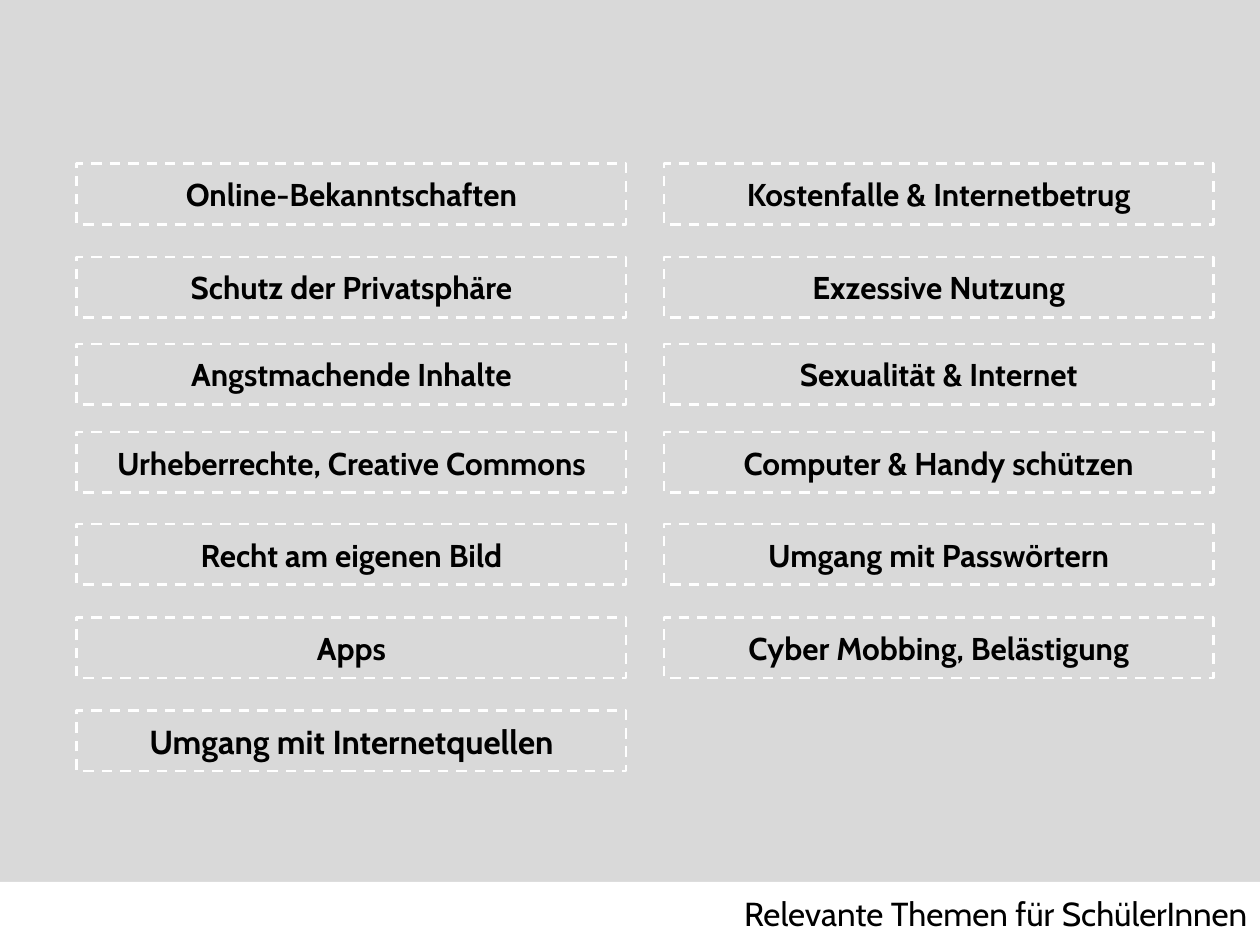
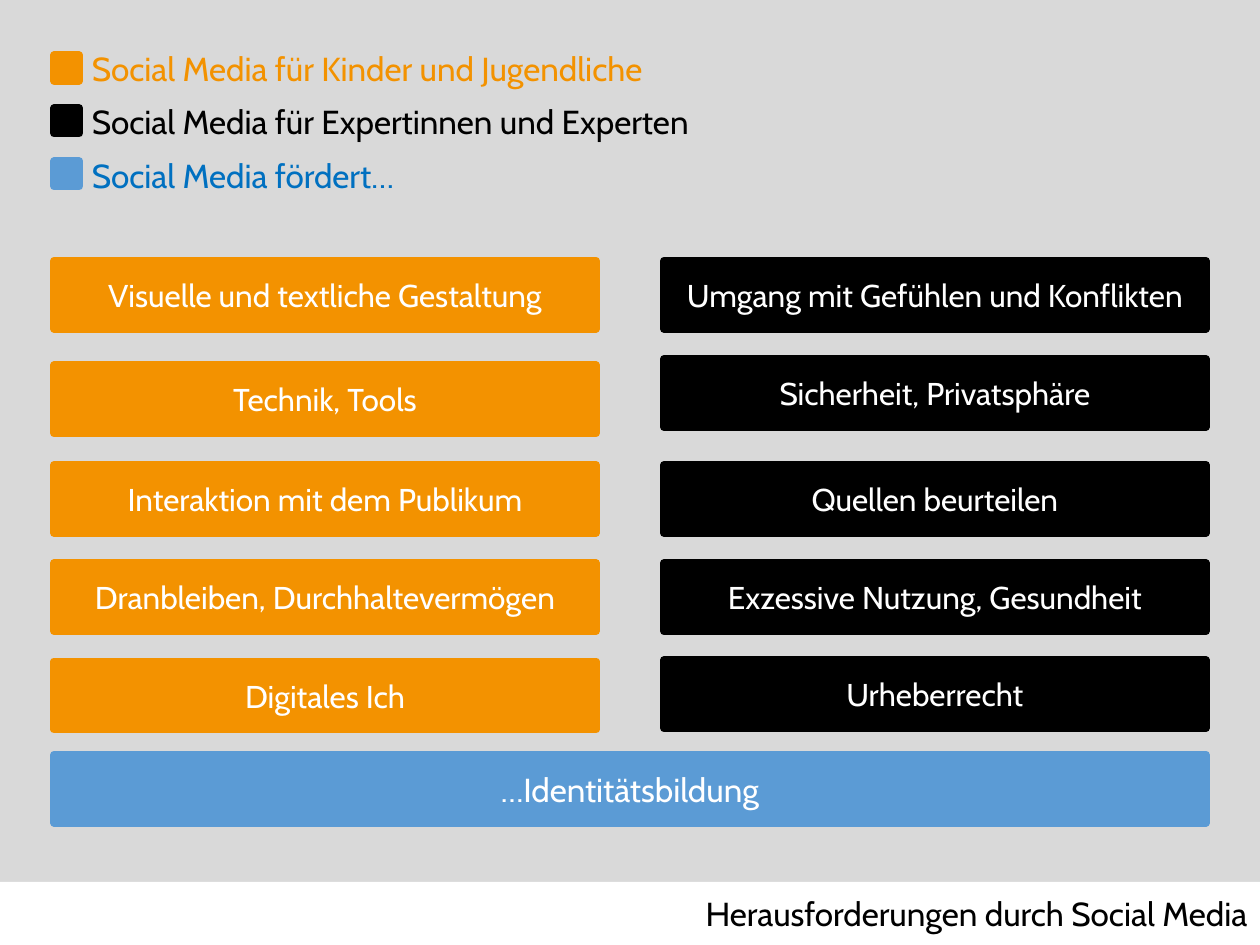
"""Builds two slides on social media topics and challenges for pupils."""
from dataclasses import dataclass

from pptx import Presentation
from pptx.dml.color import RGBColor
from pptx.enum.dml import MSO_LINE
from pptx.enum.shapes import MSO_SHAPE
from pptx.enum.text import MSO_ANCHOR, MSO_AUTO_SIZE, PP_ALIGN
from pptx.util import Inches, Pt


@dataclass(frozen=True)
class Theme:
    font: str = "Cabin"
    grey: str = "D9D9D9"
    white: str = "FFFFFF"
    black: str = "000000"
    orange: str = "F39200"
    blue: str = "5B9BD5"
    dark_blue: str = "0070C0"
    large: int = 19
    normal: int = 18
    dash_width: float = 1.5
    edge_width: float = 4.5


THEME = Theme()


def add_run(paragraph, text, color, size, bold=False):
    run = paragraph.add_run()
    run.text = text
    run.font.name = THEME.font
    run.font.size = Pt(size)
    run.font.bold = bold
    run.font.color.rgb = RGBColor.from_string(color)


def add_box(shapes, place, fill, edge, text="", color=THEME.white, size=THEME.normal):
    box = shapes.add_shape(MSO_SHAPE.RECTANGLE, *map(Inches, place))
    box.shadow.inherit = False
    box.line.color.rgb = RGBColor.from_string(edge)
    if fill:
        box.fill.solid()
        box.fill.fore_color.rgb = RGBColor.from_string(fill)
        box.line.width = Pt(THEME.edge_width)
    else:
        box.fill.background()
        box.line.width = Pt(THEME.dash_width)
        box.line.dash_style = MSO_LINE.DASH
    if text:
        box.text_frame.word_wrap = True
        box.text_frame.vertical_anchor = MSO_ANCHOR.MIDDLE
        paragraph = box.text_frame.paragraphs[0]
        paragraph.alignment = PP_ALIGN.CENTER
        add_run(paragraph, text, color, size, bold=not fill)
    return box


deck = Presentation()
deck.slide_width, deck.slide_height = Inches(10), Inches(7.5)
title_only = deck.slide_layouts[5]
title_only.background.fill.solid()
title_only.background.fill.fore_color.rgb = RGBColor.from_string(THEME.grey)

slides = []
for heading in ("Relevante Themen für SchülerInnen", "Herausforderungen durch Social Media"):
    slide = deck.slides.add_slide(title_only)
    title = slide.shapes.title
    title.left, title.top, title.width, title.height = map(Inches, (4.53, 7.04, 5.47, 0.42))
    title.text_frame.word_wrap = True
    title.text_frame.auto_size = MSO_AUTO_SIZE.SHAPE_TO_FIT_TEXT
    title.text_frame.vertical_anchor = MSO_ANCHOR.TOP
    title.text_frame.paragraphs[0].alignment = PP_ALIGN.RIGHT
    add_run(title.text_frame.paragraphs[0], heading, THEME.black, THEME.large)
    slides.append(slide)
topics_slide, challenges_slide = slides

footer_band = add_box(topics_slide.shapes, (0, 7, 10, 0.5), THEME.white, THEME.white)
footer_band.line.fill.background()
title_only.shapes.element.append(footer_band.element)

topic_rows = (1.3, 2.04, 2.73, 3.43, 4.16, 4.9, 5.64)
topic_columns = {
    0.61: ("Online-Bekanntschaften", "Schutz der Privatsphäre", "Angstmachende Inhalte",
           "Urheberrechte, Creative Commons", "Recht am eigenen Bild", "Apps",
           "Umgang mit Internetquellen"),
    5.27: ("Kostenfalle & Internetbetrug", "Exzessive Nutzung", "Sexualität & Internet",
           "Computer & Handy schützen", "Umgang mit Passwörtern",
           "Cyber Mobbing, Belästigung"),
}
for left, topics in topic_columns.items():
    for top, topic in zip(topic_rows, topics):
        size = THEME.large if top == topic_rows[-1] else THEME.normal
        add_box(topics_slide.shapes, (left, top, 4.36, 0.48), None, THEME.white,
                topic, THEME.black, size)

margin, right_column, column_width, row_height = 0.43, 5.27, 4.3, 0.54
challenge_columns = (
    (margin, THEME.orange, (
        (2.07, "Visuelle und textliche Gestaltung"),
        (2.9, "Technik, Tools"),
        (3.69, "Interaktion mit dem Publikum"),
        (4.47, "Dranbleiben, Durchhaltevermögen"),
        (5.25, "Digitales Ich"))),
    (right_column, THEME.black, (
        (2.07, "Umgang mit Gefühlen und Konflikten"),
        (2.85, "Sicherheit, Privatsphäre"),
        (3.69, "Quellen beurteilen"),
        (4.47, "Exzessive Nutzung, Gesundheit"),
        (5.24, "Urheberrecht"))),
)
challenges = challenges_slide.shapes.add_group_shape().shapes
for left, color, entries in challenge_columns:
    for top, challenge in entries:
        add_box(challenges, (left, top, column_width, row_height), color, color, challenge)
full_width = right_column + column_width - margin
add_box(challenges, (margin, 5.99, full_width, row_height), THEME.blue, THEME.blue,
        "…Identitätsbildung", size=THEME.large)

legend = challenges_slide.shapes.add_group_shape().shapes
legend_text = legend.add_textbox(*map(Inches, (0.63, 0.33, 5.28, 1.28))).text_frame
legend_text.word_wrap = True
legend_entries = (
    ("Social Media für Kinder und Jugendliche", THEME.orange, THEME.orange),
    ("Social Media für Expertinnen und Experten", THEME.black, THEME.black),
    ("Social Media fördert…", THEME.dark_blue, THEME.blue),
)
for row, (label, text_color, key_color) in enumerate(legend_entries):
    line = legend_text.add_paragraph() if row else legend_text.paragraphs[0]
    line.space_before = Pt(4 if row else 0)
    line.space_after = Pt(4)
    add_run(line, label, text_color, THEME.large)
    add_box(legend, (margin, 0.44 + 0.42 * row, 0.2, 0.2), key_color, key_color)

deck.save("out.pptx")
